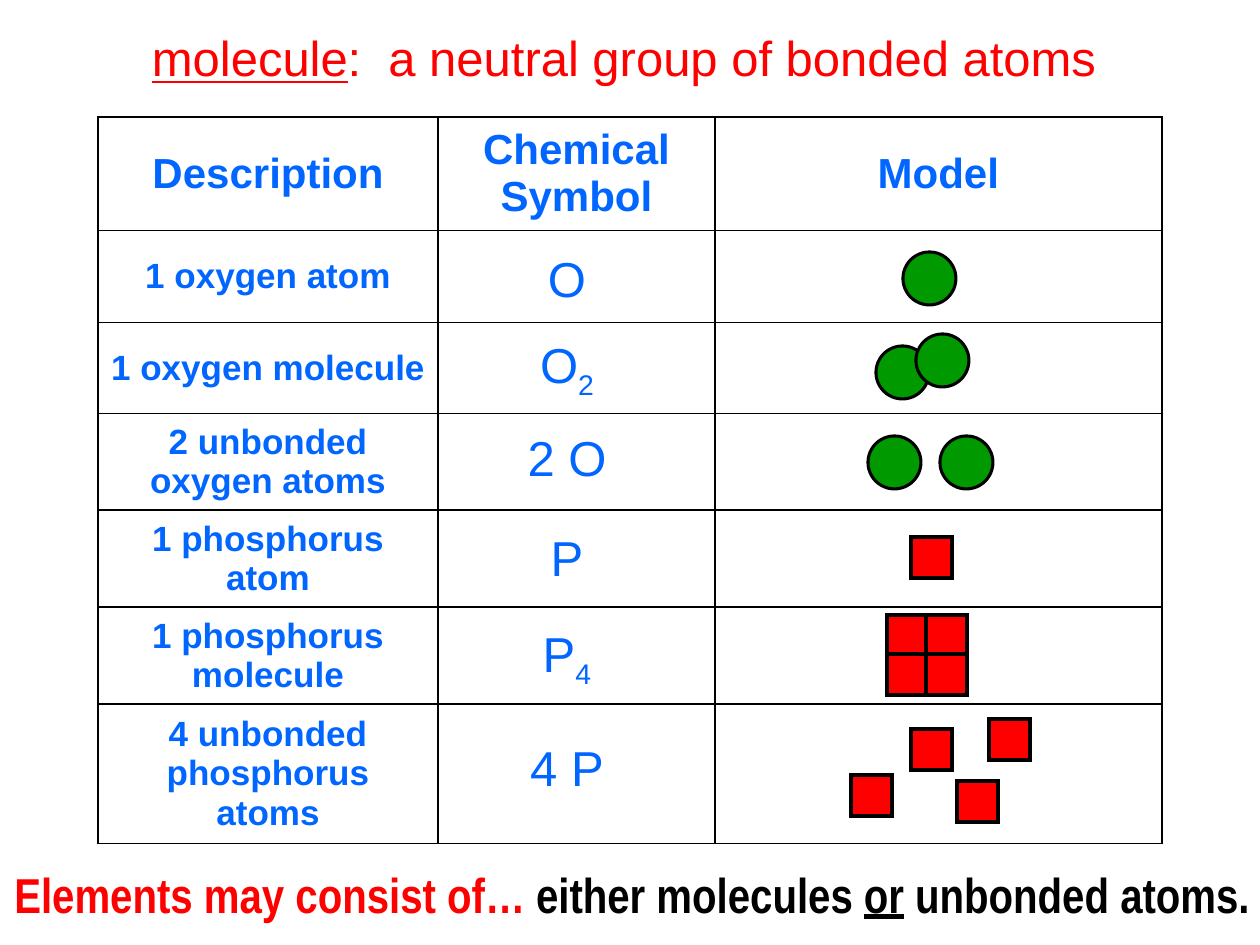
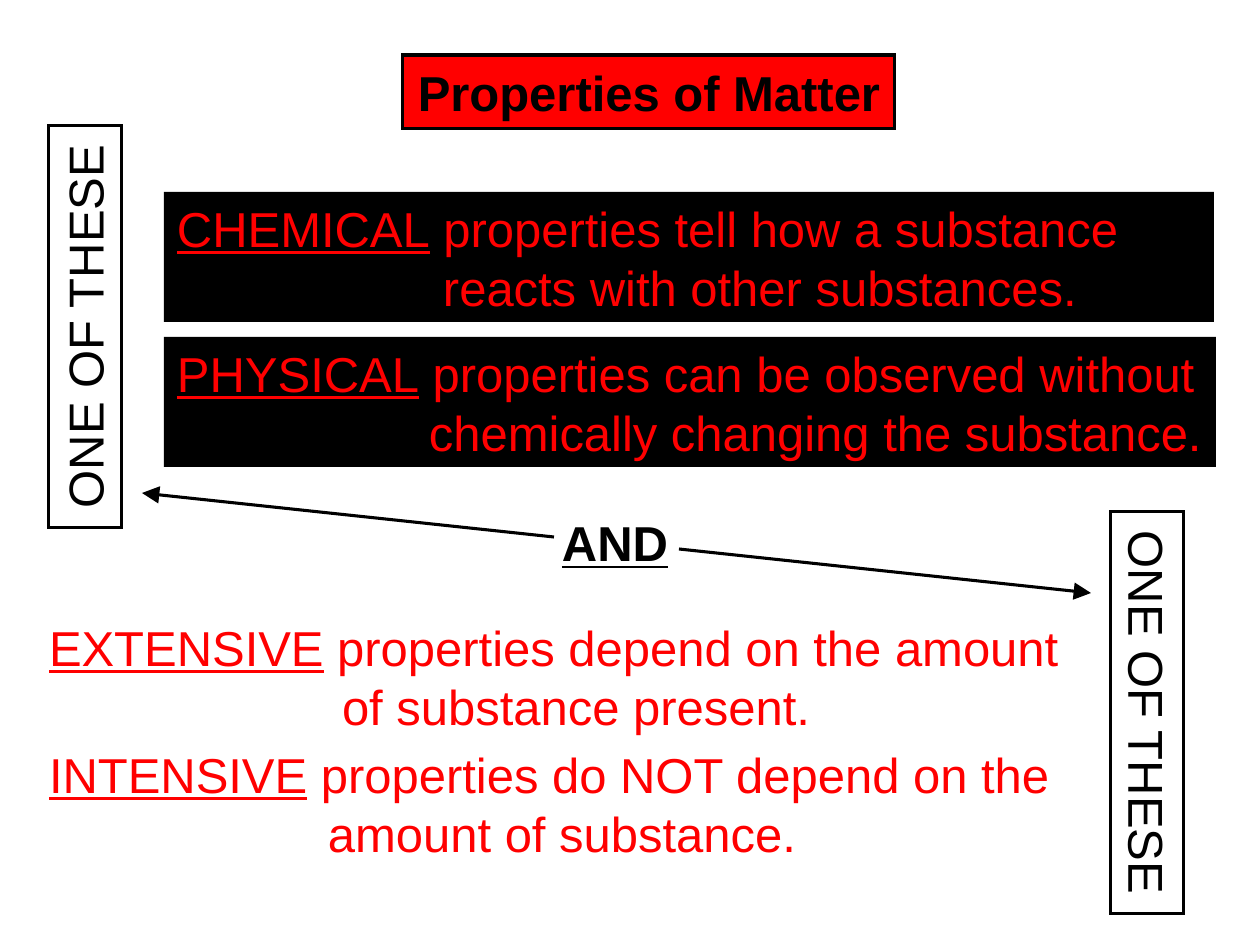
from itertools import product

from lxml.etree import SubElement
from pptx import Presentation
from pptx.dml.color import RGBColor
from pptx.enum.shapes import MSO_CONNECTOR, MSO_SHAPE
from pptx.enum.text import MSO_ANCHOR, PP_ALIGN
from pptx.oxml.ns import qn
from pptx.util import Emu, Pt

PX = 914400 / 126
RED, BLUE, GREEN, BLACK, WHITE = "FF0000", "0066FF", "009900", "000000", "FFFFFF"
BODY_SIZE = 28
OUTLINE = 1.75
ATOM_SIZE = {MSO_SHAPE.OVAL: 53, MSO_SHAPE.RECTANGLE: 41}

COLUMNS = [340, 277, 447]
ROWS = [113, 92, 91, 96, 97, 96, 140]
HEADINGS = ["Description", "Chemical Symbol", "Model"]
DESCRIPTIONS = [
    "1 oxygen atom", "1 oxygen molecule", "2 unbonded oxygen atoms",
    "1 phosphorus atom", "1 phosphorus molecule", "4 unbonded phosphorus atoms",
]
SYMBOLS = [("O", "", 242), ("O", "2", 328), ("2 O", "", 421),
           ("P", "", 521), ("P", "4", 617), ("4 P", "", 731)]
OXYGEN = [(903, 252), (876, 346), (916, 334), (868, 436), (940, 436)]
PHOSPHORUS = [(911, 537), (911, 729), (989, 719), (851, 775), (957, 781)]
PHOSPHORUS += [(887 + 39 * col, 615 + 39 * row) for row, col in product(range(2), repeat=2)]


def px(*lengths):
    """Turn px lengths into EMU."""
    return [Emu(round(length * PX)) for length in lengths]


def rgb(hex_colour):
    """Turn a hex string into a colour."""
    return RGBColor.from_string(hex_colour)


def add_run(paragraph, words, colour=RED, size=BODY_SIZE, face="Arial",
            bold=False, underline=False, subscript=False):
    """Add one styled run to a paragraph."""
    run = paragraph.add_run()
    run.text = words
    font = run.font
    font.name, font.size, font.bold, font.underline = face, Pt(size), bold, underline
    font.color.rgb = rgb(colour)
    if subscript:
        run._r.get_or_add_rPr().set("baseline", "-25000")


def prepare_text(shape, align=PP_ALIGN.LEFT, anchor=MSO_ANCHOR.MIDDLE, wrap=False, side_margin=13):
    """Set how a shape holds its text and return its first paragraph."""
    frame = shape.text_frame
    frame.word_wrap, frame.vertical_anchor = wrap, anchor
    frame.margin_left, frame.margin_right = px(side_margin, side_margin)
    paragraph = frame.paragraphs[0]
    paragraph.alignment = align
    return paragraph


def add_line_of_text(slide, box, **layout):
    """Add a text box and return its first paragraph."""
    return prepare_text(slide.shapes.add_textbox(*px(*box)), **layout)


def add_figure(slide, preset, box, fill, outline=OUTLINE):
    """Add a filled preset shape, outlined in black unless outline is 0."""
    figure = slide.shapes.add_shape(preset, *px(*box))
    figure.shadow.inherit = False
    figure.fill.solid()
    figure.fill.fore_color.rgb = rgb(fill)
    if outline:
        figure.line.color.rgb = rgb(BLACK)
        figure.line.width = Pt(outline)
        SubElement(figure.line._get_or_add_ln(), qn("a:miter"), lim="800000")
    else:
        figure.line.fill.background()
    return figure


def add_atoms(slide, preset, places, fill):
    """Draw one atom at each place."""
    size = ATOM_SIZE[preset]
    for left, top in places:
        add_figure(slide, preset, (left, top, size, size), fill)


def border_cell(cell):
    """Give a cell thin black borders on a white fill."""
    properties = cell._tc.get_or_add_tcPr()
    for side in ("a:lnL", "a:lnR", "a:lnT", "a:lnB"):
        border = SubElement(properties, qn(side), w=str(Pt(1)))
        SubElement(SubElement(border, qn("a:solidFill")), qn("a:srgbClr"), val=BLACK)
    cell.fill.solid()
    cell.fill.fore_color.rgb = rgb(WHITE)


def fill_cell(cell, words, size):
    """Write centred bold words in a cell."""
    paragraph = cell.text_frame.paragraphs[0]
    paragraph.alignment = PP_ALIGN.CENTER
    add_run(paragraph, words, BLUE, size, bold=True)


def add_particle_table(slide):
    """Add the table of descriptions, symbols and models."""
    table = slide.shapes.add_table(
        len(ROWS), len(COLUMNS), *px(98, 117, sum(COLUMNS), sum(ROWS))).table
    for column, width in zip(table.columns, px(*COLUMNS)):
        column.width = width
    for row, height in zip(table.rows, px(*ROWS)):
        row.height = height
    for cell in table.iter_cells():
        border_cell(cell)
        cell.vertical_anchor = MSO_ANCHOR.MIDDLE
    for index, heading in enumerate(HEADINGS):
        fill_cell(table.cell(0, index), heading, 24)
    for index, description in enumerate(DESCRIPTIONS, 1):
        fill_cell(table.cell(index, 0), description, 20)


def write_property(shape, term, start, ending, indent, wrap=False):
    """Write an underlined term and its two-line meaning."""
    first = prepare_text(shape, wrap=wrap)
    add_run(first, term, underline=True)
    add_run(first, start)
    second = shape.text_frame.add_paragraph()
    second.alignment = PP_ALIGN.LEFT
    second._p.get_or_add_pPr().set("marL", str(px(indent)[0]))
    add_run(second, ending)


def add_side_label(slide, box, rotation):
    """Add a turned label beside a pair of properties."""
    label = add_figure(slide, MSO_SHAPE.RECTANGLE, box, WHITE, 1.5)
    label.rotation = rotation
    paragraph = prepare_text(label, PP_ALIGN.CENTER, MSO_ANCHOR.TOP, wrap=True)
    add_run(paragraph, "ONE OF THESE", BLACK)


def add_arrow(slide, *ends):
    """Add a black line with an arrowhead at its far end."""
    arrow = slide.shapes.add_connector(MSO_CONNECTOR.STRAIGHT, *px(*ends))
    arrow.line.color.rgb = rgb(BLACK)
    arrow.line.width = Pt(OUTLINE)
    SubElement(arrow.line._get_or_add_ln(), qn("a:tailEnd"), type="triangle", w="lg", len="lg")
    SubElement(arrow._element.spPr, qn("a:effectLst"))


def build_molecules(slide):
    """Build the slide on atoms and molecules."""
    definition = add_line_of_text(slide, (139, 21, 973, 72))
    add_run(definition, "molecule", underline=True)
    add_run(definition, ":  a neutral group of bonded atoms")
    add_particle_table(slide)
    for symbol, count, top in SYMBOLS:
        formula = add_line_of_text(slide, (467, top, 200, 72), align=PP_ALIGN.CENTER,
                                   anchor=MSO_ANCHOR.TOP, wrap=True)
        add_run(formula, symbol, BLUE)
        if count:
            add_run(formula, count, BLUE, subscript=True)
    add_atoms(slide, MSO_SHAPE.OVAL, OXYGEN, GREEN)
    add_atoms(slide, MSO_SHAPE.RECTANGLE, PHOSPHORUS, RED)
    conclusion = add_line_of_text(slide, (2, 858, 1260, 72), align=PP_ALIGN.CENTER, side_margin=0)
    for words, colour, underline in (
            ("Elements may consist of…", RED, False), (" either molecules ", BLACK, False),
            ("or", BLACK, True), (" unbonded atoms.", BLACK, False)):
        add_run(conclusion, words, colour, face="Arial Narrow", bold=True, underline=underline)


def build_properties(slide):
    """Build the slide on properties of matter."""
    heading = add_figure(slide, MSO_SHAPE.RECTANGLE, (403, 55, 492, 74), RED)
    add_run(prepare_text(heading, PP_ALIGN.CENTER), "Properties of Matter", BLACK, bold=True)

    chemical = add_figure(slide, MSO_SHAPE.RECTANGLE, (164, 192, 1050, 130), BLACK, 0)
    write_property(chemical, "CHEMICAL", " properties tell how a substance",
                   "reacts with other substances.", 266, wrap=True)
    physical = add_figure(slide, MSO_SHAPE.RECTANGLE, (164, 337, 1052, 130), BLACK, 0)
    write_property(physical, "PHYSICAL", " properties can be observed without",
                   "chemically changing the substance.", 252)
    extensive = slide.shapes.add_textbox(*px(36, 611, 1037, 130))
    write_property(extensive, "EXTENSIVE", " properties depend on the amount",
                   "of substance present.", 293)
    intensive = slide.shapes.add_textbox(*px(36, 738, 1028, 130))
    write_property(intensive, "INTENSIVE", " properties do NOT depend on the",
                   "amount of substance.", 279)

    add_side_label(slide, (946, 676, 402, 73), 90)
    add_side_label(slide, (-116, 290, 402, 73), 270)
    link = add_line_of_text(slide, (549, 506, 145, 72))
    add_run(link, "AND ", BLACK, bold=True, underline=True)
    add_arrow(slide, 554, 537, 142, 493)
    add_arrow(slide, 679, 549, 1091, 593)


def main():
    """Build and save both slides."""
    deck = Presentation()
    deck.slide_width, deck.slide_height = px(1260, 945)
    for build in (build_molecules, build_properties):
        build(deck.slides.add_slide(deck.slide_layouts[6]))
    deck.save("out.pptx")


if __name__ == "__main__":
    main()
